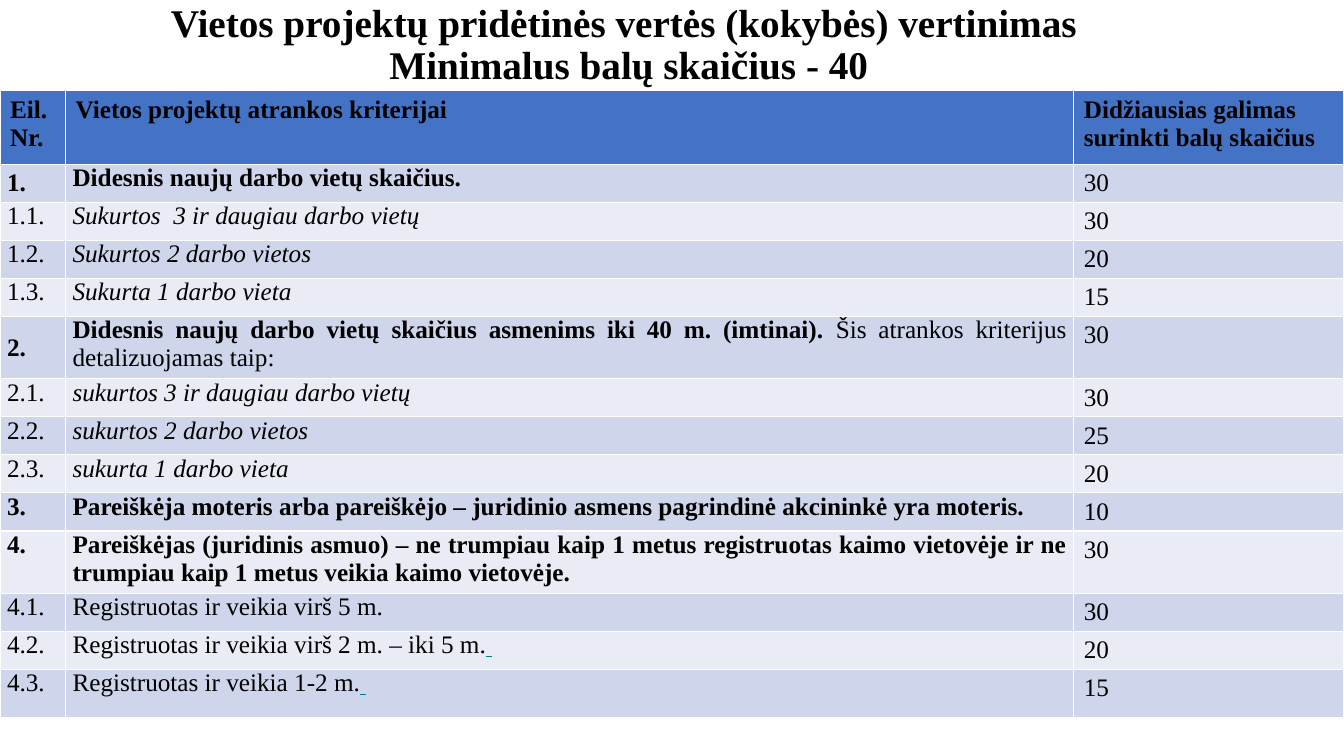
from pptx import Presentation
from pptx.dml.color import RGBColor
from pptx.enum import text
from pptx.util import Inches, Pt

FONT = "Times New Roman"
BLACK, TEAL = "000000", "008080"
HEADER_FILL = "4472C4"
BAND_FILLS = ("CFD5EA", "E9EBF5")
COLUMN_WIDTHS = (0.65, 10, 2.68)
HEADER_HEIGHT, ROW_HEIGHT, TALL_HEIGHT, LAST_HEIGHT = 0.73, 0.37, 0.62, 0.48

TITLE = "Vietos projektų pridėtinės vertės (kokybės) vertinimas \vMinimalus balų skaičius - 40"
HEADERS = ("Eil. Nr.", "Vietos projektų atrankos kriterijai",
           "Didžiausias galimas surinkti balų skaičius")

# Number, criterion as (text, style) spans, points
CRITERIA = [
    ("1.", [("Didesnis naujų darbo vietų skaičius.", "bold")], 30),
    ("1.1.", [("Sukurtos  3 ir daugiau darbo vietų", "italic")], 30),
    ("1.2.", [("Sukurtos 2 darbo vietos", "italic")], 20),
    ("1.3.", [("Sukurta 1 darbo vieta", "italic")], 15),
    ("2.", [("Didesnis naujų darbo vietų skaičius asmenims iki 40 m. (imtinai). ", "bold"),
            ("Šis atrankos kriterijus detalizuojamas taip:", "plain")], 30),
    ("2.1.", [("sukurtos 3 ir daugiau darbo vietų", "italic")], 30),
    ("2.2.", [("sukurtos 2 darbo vietos", "italic")], 25),
    ("2.3.", [("sukurta 1 darbo vieta", "italic")], 20),
    ("3.", [("Pareiškėja moteris arba pareiškėjo – juridinio asmens pagrindinė "
             "akcininkė yra moteris.", "bold")], 10),
    ("4.", [("Pareiškėjas (juridinis asmuo) – ne trumpiau kaip 1 metus registruotas kaimo "
             "vietovėje ir ne trumpiau kaip 1 metus veikia kaimo vietovėje.", "bold")], 30),
    ("4.1.", [("Registruotas ir veikia virš 5 m.", "plain")], 30),
    ("4.2.", [("Registruotas ir veikia virš 2 m. – iki 5 m.", "plain"), (" ", "underlined")], 20),
    ("4.3.", [("Registruotas ir veikia 1-2 m.", "plain"), (" ", "underlined")], 15),
]
TALL_NUMBERS = ("2.", "4.")
CENTRED_NUMBERS = ("1.", "2.")


def color(value):
    return RGBColor.from_string(value)


def set_font(font, size, bold=None):
    font.name, font.size, font.bold = FONT, Pt(size), bold
    font.color.rgb = color(BLACK)


def add_title(page):
    title = page.shapes.title
    title.left, title.top = Inches(-1.53), Inches(-0.13)
    title.width, title.height = Inches(15.53), Inches(1.17)
    frame = title.text_frame
    frame.text = TITLE
    frame.auto_size = text.MSO_AUTO_SIZE.NONE
    frame.word_wrap = True
    frame.vertical_anchor = text.MSO_ANCHOR.MIDDLE
    para = frame.paragraphs[0]
    para.alignment = text.PP_ALIGN.CENTER
    para.line_spacing = 0.9
    set_font(para.font, 28, True)


def fill_cell(cell, spans, fill, tight=False):
    """Write styled spans; a tight cell has no space above and below its text."""
    cell.fill.solid()
    cell.fill.fore_color.rgb = color(fill)
    if tight:
        cell.margin_left = cell.margin_right = Inches(0.07)
        cell.margin_top = cell.margin_bottom = 0
    para = cell.text_frame.paragraphs[0]
    for words, style in spans:
        span = para.add_run()
        span.text = words
        set_font(span.font, 18, style == "bold")
        if style == "italic":
            span.font.italic = True
        elif style == "underlined":
            span.font.underline = True
            span.font.color.rgb = color(TEAL)
    return para


def add_criteria_table(page):
    heights = [HEADER_HEIGHT]
    heights += [TALL_HEIGHT if number in TALL_NUMBERS else ROW_HEIGHT
                for number, _, _ in CRITERIA]
    heights[-1] = LAST_HEIGHT
    table = page.shapes.add_table(
        len(heights), len(COLUMN_WIDTHS), Inches(0), Inches(0.9),
        Inches(sum(COLUMN_WIDTHS)), Inches(sum(heights))).table
    for column, width in zip(table.columns, COLUMN_WIDTHS):
        column.width = Inches(width)
    for row, height in zip(table.rows, heights):
        row.height = Inches(height)

    for index, header in enumerate(HEADERS):
        fill_cell(table.cell(0, index), [(header, "bold")], HEADER_FILL)
    for index, (number, criterion, points) in enumerate(CRITERIA):
        fill = BAND_FILLS[index % 2]
        number_cell, criterion_cell, points_cell = table.rows[index + 1].cells
        is_group = number.count(".") == 1
        fill_cell(number_cell, [(number, "bold" if is_group else "plain")], fill, tight=True)
        if number in CENTRED_NUMBERS:
            number_cell.vertical_anchor = text.MSO_ANCHOR.MIDDLE
        para = fill_cell(criterion_cell, criterion, fill, tight=True)
        para.alignment = text.PP_ALIGN.JUSTIFY
        fill_cell(points_cell, [(str(points), "plain")], fill)


def main():
    deck = Presentation()
    deck.slide_width, deck.slide_height = Inches(13.33), Inches(7.5)
    page = deck.slides.add_slide(deck.slide_layouts[5])
    add_title(page)
    add_criteria_table(page)
    deck.save("out.pptx")


if __name__ == "__main__":
    main()
